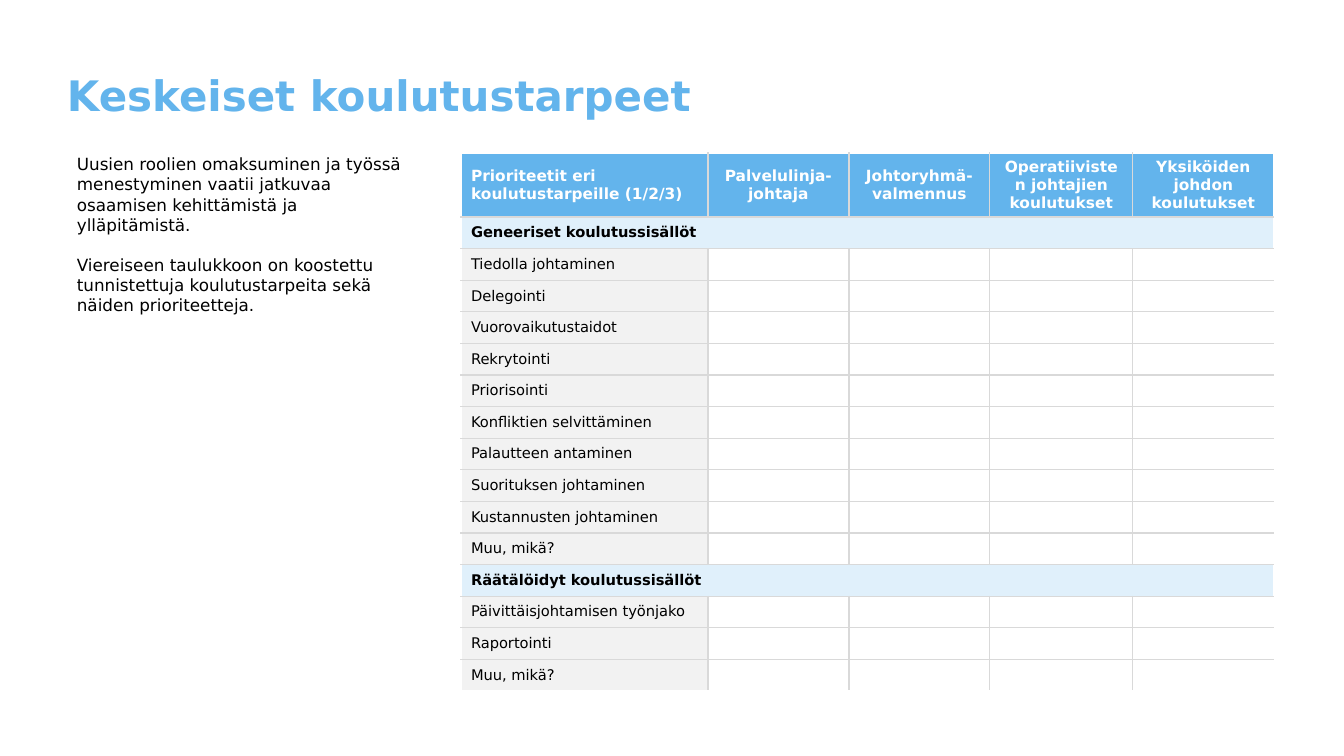
"""Builds the slide on key training needs with its priority table."""
from dataclasses import dataclass

from lxml.etree import SubElement
from pptx import Presentation
from pptx.dml.color import RGBColor
from pptx.enum.text import MSO_ANCHOR, PP_ALIGN
from pptx.oxml import parse_xml
from pptx.oxml.ns import nsdecls, qn
from pptx.util import Pt

TITLE = "Keskeiset koulutustarpeet"
INTRO = [
    "Uusien roolien omaksuminen ja työssä menestyminen vaatii jatkuvaa osaamisen kehittämistä ja ylläpitämistä.",
    "Viereiseen taulukkoon on koostettu tunnistettuja koulutustarpeita sekä näiden prioriteetteja.",
]
HEADER = [
    "Prioriteetit eri koulutustarpeille (1/2/3)",
    "Palvelulinja-johtaja",
    "Johtoryhmä-valmennus",
    "Operatiivisten johtajien koulutukset",
    "Yksiköiden johdon koulutukset",
]
SECTIONS = {
    "Geneeriset koulutussisällöt": [
        "Tiedolla johtaminen", "Delegointi", "Vuorovaikutustaidot", "Rekrytointi",
        "Priorisointi", "Konfliktien selvittäminen", "Palautteen antaminen",
        "Suorituksen johtaminen", "Kustannusten johtaminen", "Muu, mikä?",
    ],
    "Räätälöidyt koulutussisällöt": [
        "Päivittäisjohtamisen työnjako", "Raportointi", "Muu, mikä?",
    ],
}
SLIDE_SIZE = (1344, 756)
TITLE_BOX = (67, 67, 1210, 66)
TITLE_INSET = 3
INTRO_BOX = (67, 149, 357, 540)
TABLE_LEFT, TABLE_TOP = 461, 153
COLUMN_WIDTHS = [247, 141, 141, 143, 141]
HEADER_HEIGHT, BODY_HEIGHT = 63, 474


@dataclass(frozen=True)
class Theme:
    font: str = "DejaVu Sans"
    accent: str = "63B4EC"
    section: str = "E0F0FB"
    label: str = "F2F2F2"
    grid: str = "D9D9D9"
    white: str = "FFFFFF"
    black: str = "000000"
    title_size: float = 30
    intro_size: float = 12
    header_size: float = 11
    cell_size: float = 10.5
    paragraph_gap: float = 14


THEME = Theme()


def px(length):
    return round(length * 914400 / 100.8)


def style(para, size, color, bold=False):
    para.font.name = THEME.font
    para.font.size = Pt(size)
    para.font.bold = bold
    para.font.color.rgb = RGBColor.from_string(color)


def set_borders(cell, colors):
    for index, (side, color) in enumerate(zip("LRTB", colors)):
        cell._tc.get_or_add_tcPr().insert(index, parse_xml(
            f'<a:ln{side} {nsdecls("a")} w="{Pt(1)}"><a:solidFill>'
            f'<a:srgbClr val="{color}"/></a:solidFill></a:ln{side}>'))


def fill_cell(cell, text, size, color, fill=None, bold=False):
    cell.vertical_anchor = MSO_ANCHOR.MIDDLE
    para = cell.text_frame.paragraphs[0]
    if text:
        para.text = text
        style(para, size, color, bold)
    else:
        SubElement(para._p, qn("a:endParaRPr"), sz=str(round(size * 100)))
    if fill:
        cell.fill.solid()
        cell.fill.fore_color.rgb = RGBColor.from_string(fill)
    else:
        cell.fill.background()


def add_title(page):
    title = page.shapes.title
    title.left, title.top, title.width, title.height = map(px, TITLE_BOX)
    frame = title.text_frame
    frame.margin_left = frame.margin_right = frame.margin_bottom = 0
    frame.margin_top = px(TITLE_INSET)
    frame.vertical_anchor = MSO_ANCHOR.TOP
    frame.word_wrap = True
    frame.text = TITLE
    para = frame.paragraphs[0]
    para.alignment = PP_ALIGN.LEFT
    style(para, THEME.title_size, THEME.accent, True)


def add_intro(page):
    frame = page.shapes.add_textbox(*map(px, INTRO_BOX)).text_frame
    frame.word_wrap = True
    frame.text = "\n".join(INTRO)
    for index, para in enumerate(frame.paragraphs):
        style(para, THEME.intro_size, THEME.black)
        if index:
            para.space_before = Pt(THEME.paragraph_gap)


def add_priorities(page):
    rows = [HEADER]
    for section, topics in SECTIONS.items():
        rows += [[section]] + [[topic] for topic in topics]
    last_row, last_column = len(rows) - 1, len(HEADER) - 1
    frame = page.shapes.add_table(
        len(rows), len(HEADER), px(TABLE_LEFT), px(TABLE_TOP),
        px(sum(COLUMN_WIDTHS)), px(HEADER_HEIGHT + BODY_HEIGHT))
    table = frame.table
    table.first_row = table.horz_banding = False
    for column, width in zip(table.columns, COLUMN_WIDTHS):
        column.width = px(width)
    for r, texts in enumerate(rows):
        table.rows[r].height = px(BODY_HEIGHT / last_row if r else HEADER_HEIGHT)
        is_section = texts[0] in SECTIONS
        for c in range(len(HEADER)):
            cell = table.cell(r, c)
            text = texts[c] if c < len(texts) else ""
            if r == 0:
                fill_cell(cell, text, THEME.header_size, THEME.white, THEME.accent, True)
                if c:
                    cell.text_frame.paragraphs[0].alignment = PP_ALIGN.CENTER
            else:
                fill = THEME.section if is_section else None if c else THEME.label
                fill_cell(cell, text, THEME.cell_size, THEME.black, fill, is_section)
            outer = (is_section or c == 0, is_section or c == last_column,
                     r == 0, r == last_row)
            set_borders(cell, [THEME.white if edge else THEME.grid for edge in outer])
        if is_section:
            table.cell(r, 0).merge(table.cell(r, last_column))


def main():
    deck = Presentation()
    deck.slide_width, deck.slide_height = map(px, SLIDE_SIZE)
    page = deck.slides.add_slide(deck.slide_layouts[5])
    add_title(page)
    add_priorities(page)
    add_intro(page)
    deck.save("out.pptx")


if __name__ == "__main__":
    main()
